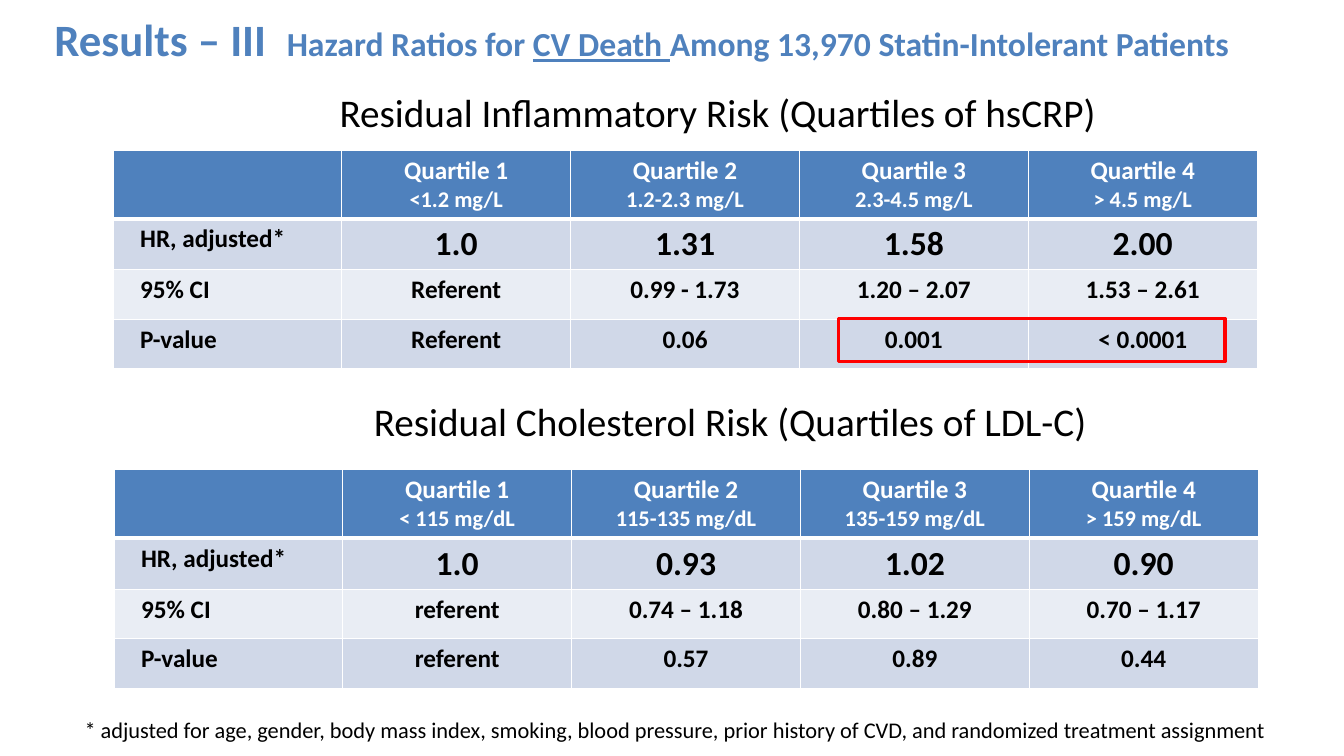
from lxml import etree
from pptx import Presentation
from pptx.dml.color import RGBColor
from pptx.enum.shapes import MSO_SHAPE
from pptx.enum.text import PP_ALIGN
from pptx.oxml.ns import qn
from pptx.util import Inches, Pt

LEFT, CENTER = PP_ALIGN.LEFT, PP_ALIGN.CENTER
RECTANGLE = MSO_SHAPE.RECTANGLE

BLUE = RGBColor(0x4F, 0x81, 0xBD)
BAND_DARK = RGBColor(0xD0, 0xD8, 0xE8)
BAND_LIGHT = RGBColor(0xE9, 0xED, 0xF4)
BLACK = RGBColor(0x00, 0x00, 0x00)
WHITE = RGBColor(0xFF, 0xFF, 0xFF)
RED = RGBColor(0xFF, 0x00, 0x00)

COLUMN_WIDTH = 2.27
HEADER_HEIGHT, ROW_HEIGHT = 0.68, 0.49
LABEL_MARGIN = 0.27
BORDER, HEADER_BORDER = 1, 3

CRP_TABLE = [
    [(), ("Quartile 1", "<1.2 mg/L"), ("Quartile 2", "1.2-2.3 mg/L"),
     ("Quartile 3", "2.3-4.5 mg/L"), ("Quartile 4", "> 4.5 mg/L")],
    ["HR, adjusted*", "1.0", "1.31", "1.58", "2.00"],
    ["95% CI", "Referent", "0.99 - 1.73", "1.20 – 2.07", "1.53 – 2.61"],
    ["P-value", "Referent", "0.06", "0.001", "< 0.0001"],
]
LDL_TABLE = [
    [(), ("Quartile 1", "< 115 mg/dL"), ("Quartile 2", "115-135 mg/dL"),
     ("Quartile 3", "135-159 mg/dL"), ("Quartile 4", "> 159 mg/dL")],
    ["HR, adjusted*", "1.0", "0.93", "1.02", "0.90"],
    ["95% CI", "referent", "0.74 – 1.18", "0.80 – 1.29", "0.70 – 1.17"],
    ["P-value", "referent", "0.57", "0.89", "0.44"],
]


class SlideBuilder:
    font_name = "Calibri"

    def __init__(self, slide):
        self.slide = slide

    def add_run(self, paragraph, text, size, color=BLACK, bold=False, underline=False):
        run = paragraph.add_run()
        run.text = text
        font = run.font
        font.name, font.size, font.bold = self.font_name, Pt(size), bold
        font.underline = underline
        font.color.rgb = color

    def add_text(self, left, top, width, height, runs, wrap=True):
        """Each run is a tuple of the add_run arguments after the paragraph."""
        box = self.slide.shapes.add_textbox(
            Inches(left), Inches(top), Inches(width), Inches(height))
        box.text_frame.word_wrap = wrap
        for run in runs:
            self.add_run(box.text_frame.paragraphs[0], *run)

    def set_borders(self, cell, top, bottom):
        """Draw white borders; widths of the top and bottom are in points."""
        properties = cell._tc.get_or_add_tcPr()
        widths = {"a:lnL": BORDER, "a:lnR": BORDER, "a:lnT": top, "a:lnB": bottom}
        for position, (tag, width) in enumerate(widths.items()):
            line = etree.Element(qn(tag), w=str(Pt(width)))
            fill = etree.SubElement(line, qn("a:solidFill"))
            etree.SubElement(fill, qn("a:srgbClr"), val=str(WHITE))
            properties.insert(position, line)

    def fill_header_cell(self, cell, lines):
        for index, (text, size) in enumerate(zip(lines, (18, 16))):
            frame = cell.text_frame
            paragraph = frame.add_paragraph() if index else frame.paragraphs[0]
            paragraph.alignment = CENTER
            self.add_run(paragraph, text, size, WHITE, True)

    def fill_body_cell(self, cell, text, is_label, size):
        paragraph = cell.text_frame.paragraphs[0]
        paragraph.alignment = LEFT if is_label else CENTER
        if is_label:
            cell.margin_left = Inches(LABEL_MARGIN)
        self.add_run(paragraph, text, size, BLACK, True)

    def add_quartile_table(self, left, top, rows):
        columns = len(rows[0])
        height = HEADER_HEIGHT + ROW_HEIGHT * (len(rows) - 1)
        table = self.slide.shapes.add_table(
            len(rows), columns, Inches(left), Inches(top),
            Inches(COLUMN_WIDTH * columns), Inches(height)).table
        for column in table.columns:
            column.width = Inches(COLUMN_WIDTH)
        for row_index, row in enumerate(rows):
            is_header = row_index == 0
            table.rows[row_index].height = Inches(HEADER_HEIGHT if is_header else ROW_HEIGHT)
            band = BAND_DARK if row_index % 2 else BAND_LIGHT
            for column_index, content in enumerate(row):
                cell = table.cell(row_index, column_index)
                cell.fill.solid()
                cell.fill.fore_color.rgb = BLUE if is_header else band
                self.set_borders(cell, HEADER_BORDER if row_index == 1 else BORDER,
                                 HEADER_BORDER if is_header else BORDER)
                if is_header:
                    self.fill_header_cell(cell, content)
                else:
                    is_label = column_index == 0
                    is_ratio = row_index == 1 and not is_label
                    self.fill_body_cell(cell, content, is_label, 24 if is_ratio else 18)

    def add_outline(self, left, top, width, height, color, weight):
        shape = self.slide.shapes.add_shape(
            RECTANGLE, Inches(left), Inches(top), Inches(width), Inches(height))
        shape.shadow.inherit = False
        shape.fill.background()
        shape.line.color.rgb = color
        shape.line.width = Pt(weight)


def main():
    presentation = Presentation()
    presentation.slide_width = Inches(13.33)
    presentation.slide_height = Inches(7.5)
    builder = SlideBuilder(presentation.slides.add_slide(presentation.slide_layouts[6]))

    builder.add_quartile_table(1.12, 1.49, CRP_TABLE)
    builder.add_quartile_table(1.13, 4.66, LDL_TABLE)
    builder.add_text(3.27, 0.83, 8.06, 0.57,
                     [("Residual Inflammatory Risk (Quartiles of hsCRP)", 28)])
    builder.add_text(3.61, 3.89, 8.4, 0.57,
                     [("Residual Cholesterol Risk (Quartiles of LDL-C)", 28)])
    builder.add_text(0.74, 7.06, 12.5, 0.37, [
        ("* adjusted for age, gender, body mass index, smoking, blood pressure, "
         "prior history of CVD, and randomized treatment assignment", 16)])
    builder.add_text(0.44, 0.07, 12.45, 0.64, [
        ("Results – III  ", 32, BLUE, True),
        ("Hazard Ratios for ", 24, BLUE, True),
        ("CV Death ", 24, BLUE, True, True),
        ("Among 13,970 Statin-Intolerant Patients", 24, BLUE, True),
    ], wrap=False)
    builder.add_outline(8.32, 3.16, 3.83, 0.43, RED, 2.25)

    presentation.save("out.pptx")


if __name__ == "__main__":
    main()
